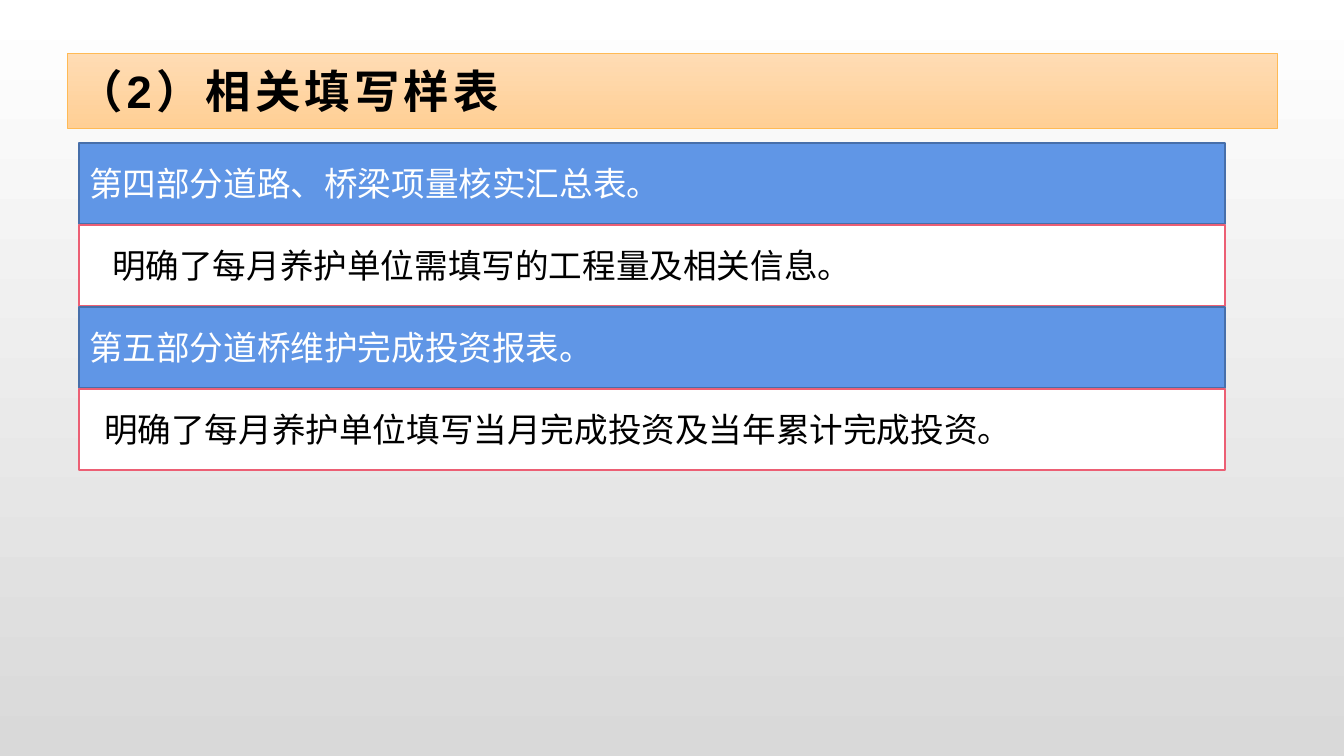
"""Build the slide that lists the sample forms and what each one records."""
import dataclasses

import pptx
import pptx.dml.color
import pptx.dml.fill
import pptx.enum.lang
import pptx.enum.shapes
import pptx.enum.text
import pptx.shapes.base
import pptx.slide
import pptx.text.text
import pptx.util

RGB = pptx.dml.color.RGBColor
BLACK = RGB(0x00, 0x00, 0x00)
WHITE = RGB(0xFF, 0xFF, 0xFF)
GREY = RGB(0xD9, 0xD9, 0xD9)
BLUE = RGB(0x60, 0x96, 0xE6)
NAVY = RGB(0x47, 0x6F, 0xAA)
ROSE = RGB(0xEC, 0x5F, 0x74)
CREAM = RGB(0xFF, 0xDC, 0xB4)
PEACH = RGB(0xFF, 0xCF, 0x95)
AMBER = RGB(0xFF, 0xBA, 0x55)

WIDE, HIGH = 1344, 756
SCALE = 12192000 / WIDE
LEFT, TOP, STEP = 79, 143, 82
ROW_WIDE, ROW_HIGH = 1146, 81
INSET = 10


@dataclasses.dataclass(frozen=True)
class Style:
    fill: RGB
    line: RGB
    ink: RGB


@dataclasses.dataclass(frozen=True)
class Row:
    text: str
    style: Style
    indent: int = 0


HEAD = Style(BLUE, NAVY, WHITE)
NOTE = Style(WHITE, ROSE, BLACK)
ROWS = [
    Row("第四部分道路、桥梁项量核实汇总表。", HEAD),
    Row("明确了每月养护单位需填写的工程量及相关信息。", NOTE, 23),
    Row("第五部分道桥维护完成投资报表。", HEAD),
    Row("明确了每月养护单位填写当月完成投资及当年累计完成投资。", NOTE, 15),
]


def px(count: int) -> pptx.util.Emu:
    return pptx.util.Emu(round(count * SCALE))


def shade(fill: pptx.dml.fill.FillFormat, start: RGB, end: RGB) -> None:
    fill.gradient()
    fill.gradient_angle = 270
    for stop, color in zip(fill.gradient_stops, (start, end)):
        stop.color.rgb = color


def edge(shape: pptx.shapes.base.BaseShape, color: RGB, width: float) -> None:
    shape.line.color.rgb = color
    shape.line.width = pptx.util.Pt(width)


def write(frame: pptx.text.text.TextFrame, text: str, size: float,
          ink: RGB) -> pptx.text.text.Font:
    frame.word_wrap = True
    frame.auto_size = pptx.enum.text.MSO_AUTO_SIZE.NONE
    frame.vertical_anchor = pptx.enum.text.MSO_ANCHOR.MIDDLE
    line = frame.paragraphs[0]
    line.alignment = pptx.enum.text.PP_ALIGN.LEFT
    run = line.add_run()
    run.text = text
    font = run.font
    font.name = "Arial"
    font.size = pptx.util.Pt(size)
    font.color.rgb = ink
    font.language_id = pptx.enum.lang.MSO_LANGUAGE_ID.SIMPLIFIED_CHINESE
    return font


def draw_title(slide: pptx.slide.Slide) -> None:
    title = slide.shapes.title
    title.left, title.top = px(67), px(53)
    title.width, title.height = px(1210), px(75)
    shade(title.fill, CREAM, PEACH)
    edge(title, AMBER, 0.5)
    font = write(title.text_frame, "（2）相关填写样表", 32.4, BLACK)
    font.bold = True
    font._element.set("spc", "300")


def draw_row(slide: pptx.slide.Slide, row: Row, top: int) -> None:
    shape = slide.shapes.add_shape(
        pptx.enum.shapes.MSO_SHAPE.RECTANGLE,
        px(LEFT), px(top), px(ROW_WIDE), px(ROW_HIGH))
    shape.shadow.inherit = False
    shape.fill.solid()
    shape.fill.fore_color.rgb = row.style.fill
    edge(shape, row.style.line, 1)
    shape.text_frame.margin_left = px(INSET + row.indent)
    write(shape.text_frame, row.text, 24, row.style.ink)


def main() -> None:
    deck = pptx.Presentation()
    deck.slide_width, deck.slide_height = px(WIDE), px(HIGH)
    slide = deck.slides.add_slide(deck.slide_layouts.get_by_name("Title Only"))
    shade(slide.background.fill, WHITE, GREY)
    draw_title(slide)
    for place, row in enumerate(ROWS):
        draw_row(slide, row, TOP + place * STEP)
    deck.save("out.pptx")


if __name__ == "__main__":
    main()
